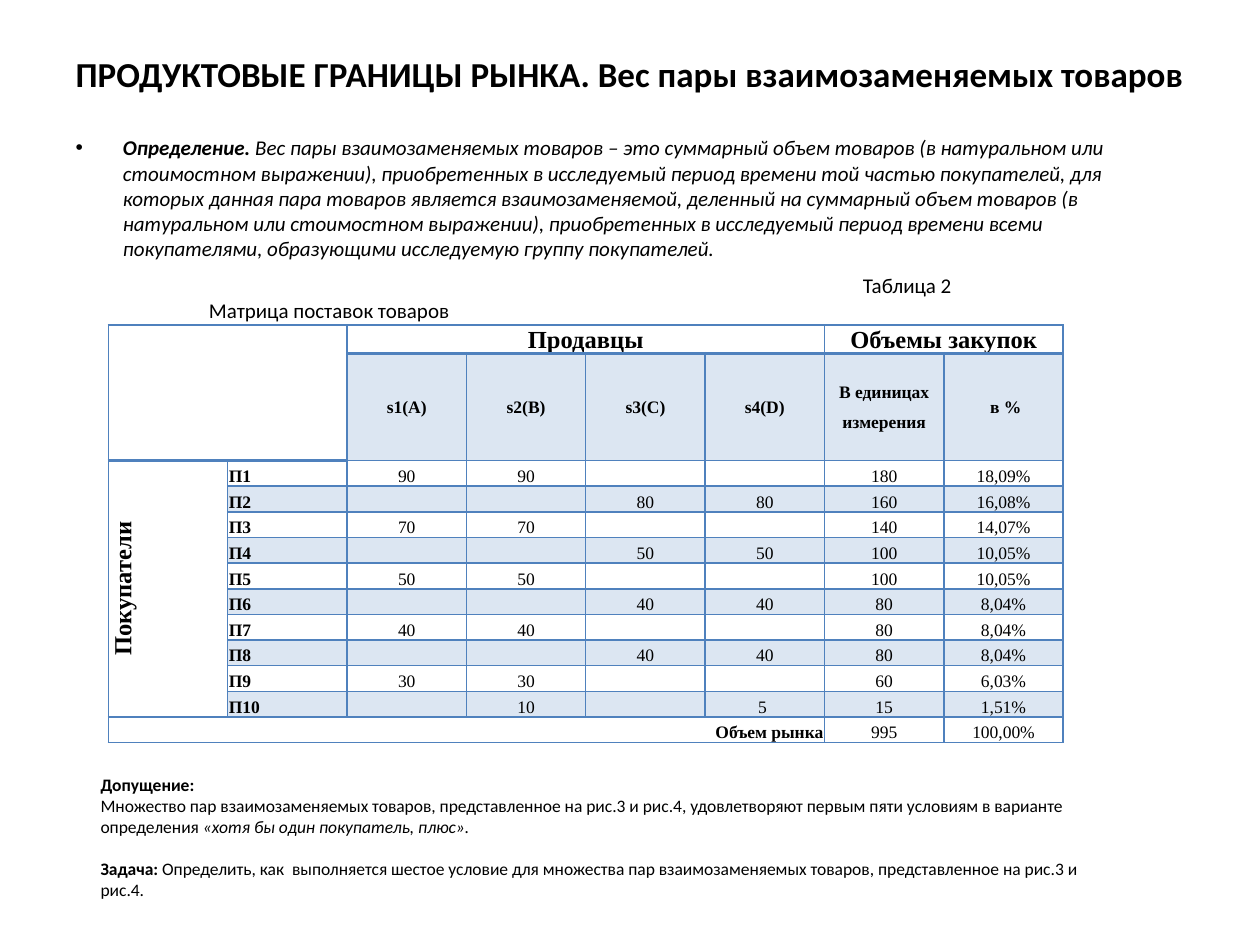
"""Build the slide on the weight of a pair of interchangeable goods."""
from lxml import etree
from pptx import Presentation, util as u
from pptx.dml import color
from pptx.enum import text
from pptx.oxml import ns

BLACK, BLUE, PALE = "000000", "4F81BD", "DCE6F2"
LEFT, CENTER, RIGHT = text.PP_ALIGN.LEFT, text.PP_ALIGN.CENTER, text.PP_ALIGN.RIGHT
MIDDLE, BOTTOM = text.MSO_ANCHOR.MIDDLE, text.MSO_ANCHOR.BOTTOM

TITLE = [(LEFT, 0, [("ПРОДУКТОВЫЕ ГРАНИЦЫ РЫНКА. Вес пары взаимозаменяемых товаров", "b")])]
DEFINITION = [(LEFT, None, [
    ("Определение. ", "bi"),
    ("Вес пары взаимозаменяемых товаров – это суммарный объем товаров (в натуральном или "
     "стоимостном выражении), приобретенных в исследуемый период времени той частью покупателей, "
     "для которых данная пара товаров является взаимозаменяемой, деленный на суммарный объем "
     "товаров (в натуральном или стоимостном выражении), приобретенных в исследуемый период "
     "времени всеми покупателями, образующими исследуемую группу покупателей.", "i"),
])]
CAPTION = [(RIGHT, 0, [(" Таблица 2", "")]), (LEFT, 0, [("Матрица поставок товаров", "")])]
TASK = [
    (LEFT, 0, [("Допущение:", "b")]),
    (LEFT, 0, [
        ("Множество пар взаимозаменяемых товаров, представленное на рис.3 и рис.4, "
         "удовлетворяют первым пяти условиям в варианте определения ", ""),
        ("«хотя бы один покупатель, плюс».", "i"),
    ]),
    (LEFT, 12, [
        ("Задача:", "b"),
        (" Определить, как  выполняется шестое условие для множества пар взаимозаменяемых "
         "товаров, представленное на рис.3 и рис.4.", ""),
    ]),
]
GROUPS = ["", "", "Продавцы", "", "", "", "Объемы закупок", ""]
HEADINGS = ["", "", "s1(A)", "s2(B)", "s3(C)", "s4(D)", "В единицах\nизмерения", " в %"]
PURCHASES = [
    ("90", "90", "", "", "180", "18,09%"),
    ("", "", "80", "80", "160", "16,08%"),
    ("70", "70", "", "", "140", "14,07%"),
    ("", "", "50", "50", "100", "10,05%"),
    ("50", "50", "", "", "100", "10,05%"),
    ("", "", "40", "40", "80", "8,04%"),
    ("40", "40", "", "", "80", "8,04%"),
    ("", "", "40", "40", "80", "8,04%"),
    ("30", "30", "", "", "60", "6,03%"),
    ("", "10", "", "5 ", "15", "1,51%"),
]
TOTAL = ["Объем рынка", "", "", "", "", "", "995", "100,00%"]
MERGES = [(0, 0, 1, 1), (0, 2, 0, 5), (0, 6, 0, 7), (2, 0, 11, 0), (12, 0, 12, 5)]


def rgb(value):
    return color.RGBColor.from_string(value)


def write(frame, paragraphs, size, font="Calibri"):
    frame.word_wrap = True
    for index, (align, before, runs) in enumerate(paragraphs):
        paragraph = frame.add_paragraph() if index else frame.paragraphs[0]
        paragraph.alignment = align
        if before is not None:
            paragraph.space_before = u.Pt(before)
        for words, style in runs:
            run = paragraph.add_run()
            run.text = words
            run.font.name, run.font.size = font, u.Pt(size)
            run.font.bold, run.font.italic = "b" in style, "i" in style
            run.font.color.rgb = rgb(BLACK)
        if not runs:
            etree.SubElement(paragraph._p, ns.qn("a:endParaRPr"), sz=str(size * 100))


def set_borders(cell, top, bottom):
    properties = cell._tc.get_or_add_tcPr()
    for side, width in (("L", 1), ("R", 1), ("T", top), ("B", bottom)):
        line = etree.SubElement(properties, ns.qn(f"a:ln{side}"), w=str(u.Pt(width)))
        fill = etree.SubElement(line, ns.qn("a:solidFill"))
        etree.SubElement(fill, ns.qn("a:srgbClr"), val=BLUE)


def fill_cell(cell, row, column, words):
    heavy = lambda r: 2 if r == 0 or (r == 1 and column < 2) else 1
    set_borders(cell, heavy(row - 1) if row else 1, heavy(row))
    cell.margin_left = cell.margin_right = cell.margin_top = u.Inches(0.01)
    cell.margin_bottom = 0
    shaded = (row == 1 and column > 1) or (2 < row < 12 and row % 2 and column)
    if shaded:
        cell.fill.solid()
        cell.fill.fore_color.rgb = rgb(PALE)
    else:
        cell.fill.background()
    side = row > 1 and column == 0
    cell.vertical_anchor = MIDDLE if row < 2 or (side and row < 12) else BOTTOM
    align = RIGHT if row == 12 and side else LEFT if row > 1 and column == 1 else CENTER
    style = "b" if row < 2 or column < 2 else ""
    size = 14 if words and (row == 0 or (side and row == 2)) else 10
    lines = [(align, 6, [(line, style)] if line else []) for line in words.split("\n")]
    write(cell.text_frame, lines, size, "Times New Roman")


def add_matrix(slide):
    buyers = [["" if number else "Покупатели", f"П{number + 1}", *values]
              for number, values in enumerate(PURCHASES)]
    rows = [GROUPS, HEADINGS, *buyers, TOTAL]
    frame = slide.shapes.add_table(len(rows), 8, u.Inches(0.86), u.Inches(2.58),
                                   u.Inches(7.58), u.Inches(3.31))
    table = frame.table
    table.first_row = table.horz_banding = False
    heights = [0.22, 0.85] + [(3.31 - 0.22 - 0.85) / 11] * 11
    for table_row, height in zip(table.rows, heights):
        table_row.height = u.Inches(height)
    for row, values in enumerate(rows):
        for column, words in enumerate(values):
            fill_cell(table.cell(row, column), row, column, words)
    for top, left, bottom, right in MERGES:
        table.cell(top, left).merge(table.cell(bottom, right))
    table.cell(2, 0)._tc.get_or_add_tcPr().set("vert", "vert270")


def place(shape, box, paragraphs, size):
    shape.left, shape.top, shape.width, shape.height = map(u.Inches, box)
    shape.text_frame.auto_size = text.MSO_AUTO_SIZE.NONE
    write(shape.text_frame, paragraphs, size)


def main():
    presentation = Presentation()
    presentation.slide_width, presentation.slide_height = u.Inches(10), u.Inches(7.5)
    slide = presentation.slides.add_slide(presentation.slide_layouts[1])
    title, body = slide.placeholders
    place(title, (0.5, 0.3, 9.23, 0.56), TITLE, 20)
    title.text_frame.vertical_anchor = MIDDLE
    place(body, (0.5, 1.02, 9, 5.94), DEFINITION, 12)
    add_matrix(slide)
    for box, paragraphs, size in (((1.56, 2.11, 6.09, 0.51), CAPTION, 12),
                                  ((0.7, 6.09, 8.2, 1.11), TASK, 10)):
        place(slide.shapes.add_textbox(0, 0, 0, 0), box, paragraphs, size)
    presentation.save("out.pptx")


if __name__ == "__main__":
    main()
